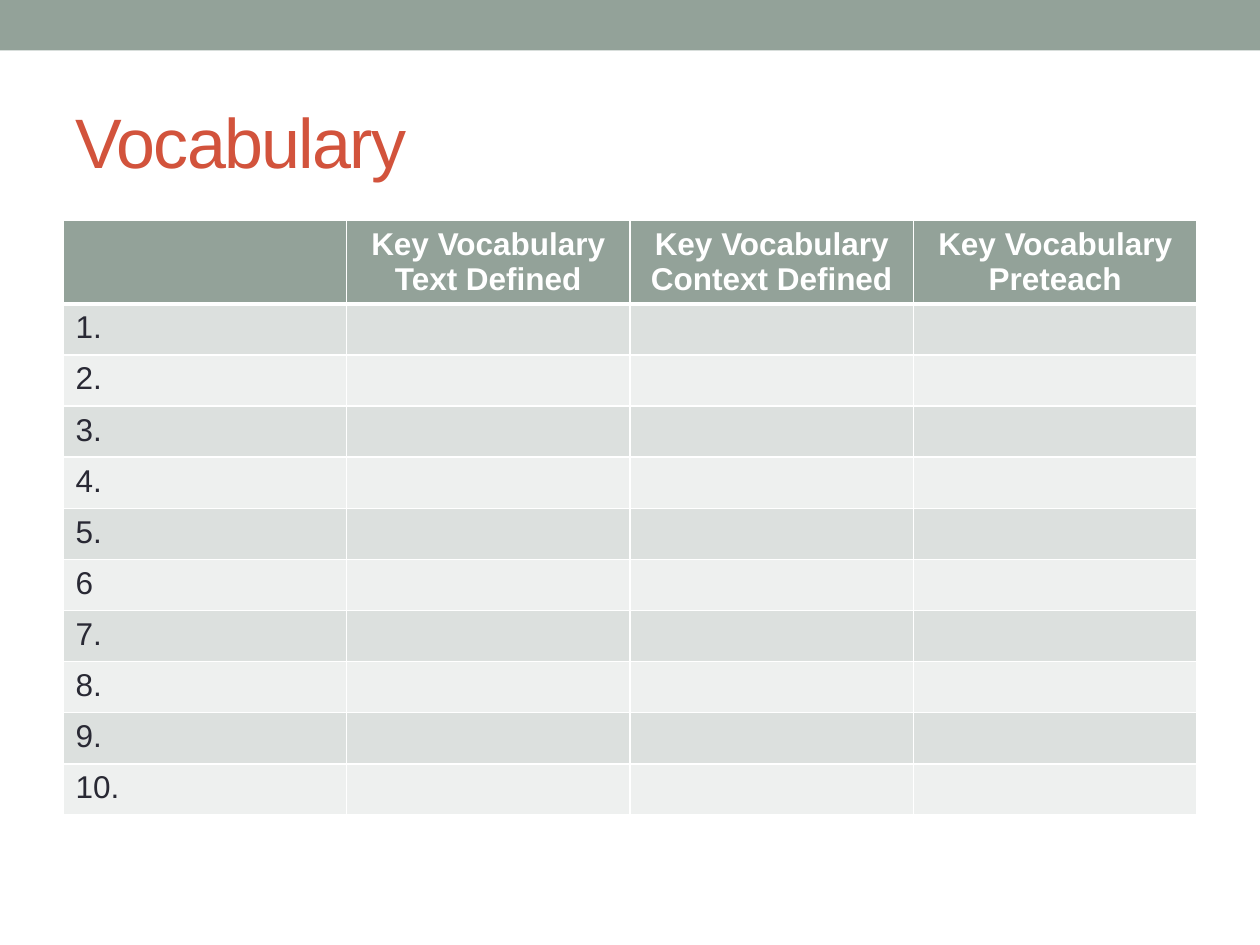
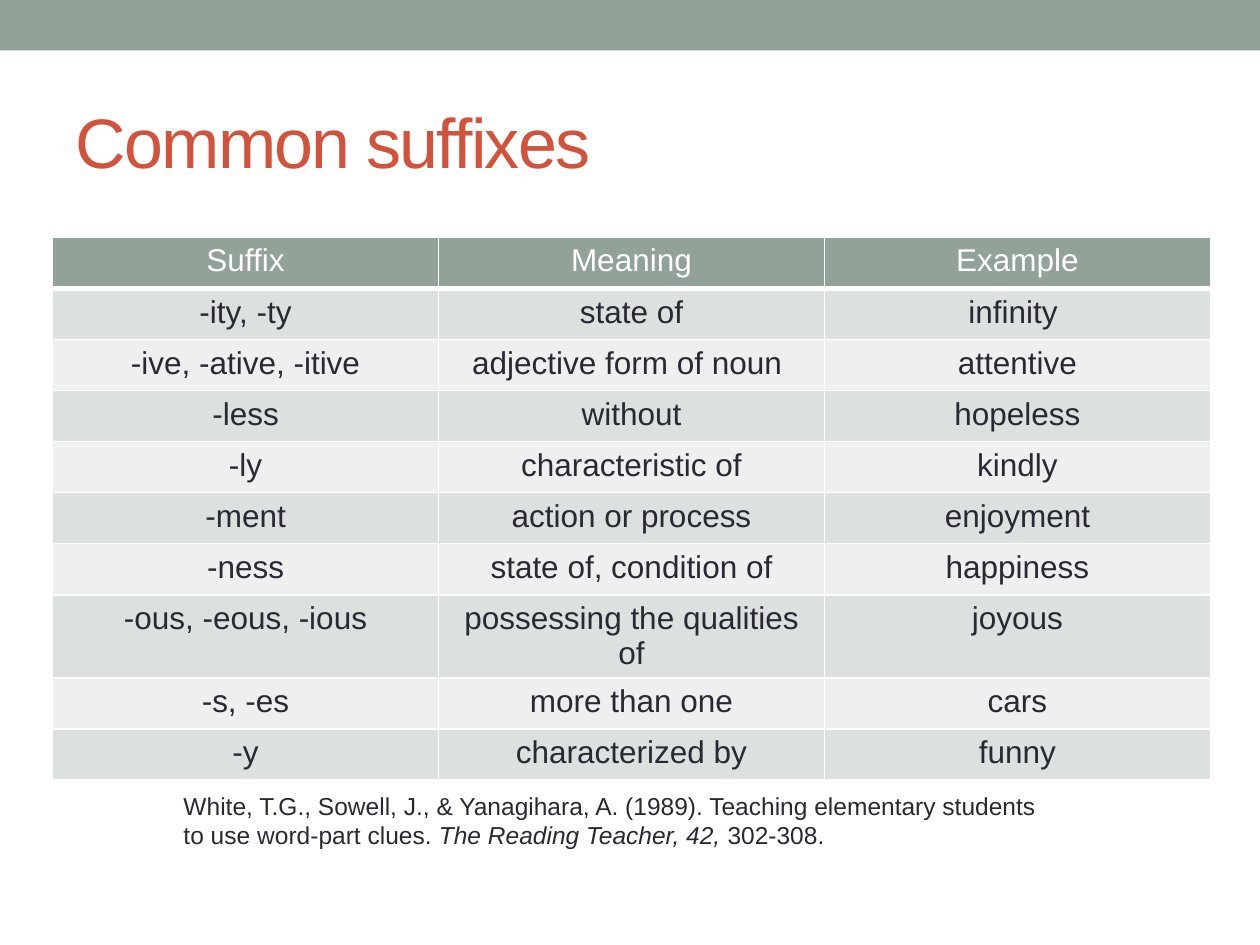
from pptx import Presentation
from pptx.dml.color import RGBColor
from pptx.enum.shapes import MSO_SHAPE
from pptx.enum.text import MSO_ANCHOR, MSO_AUTO_SIZE, PP_ALIGN
from pptx.oxml.ns import qn
from pptx.util import Cm, Pt
from lxml.etree import SubElement

SAGE = RGBColor(0x93, 0xA2, 0x99)
RUST = RGBColor(0xD2, 0x53, 0x3C)
INK = RGBColor(0x29, 0x29, 0x34)
WHITE = RGBColor(0xFF, 0xFF, 0xFF)
ROW_FILLS = (RGBColor(0xEE, 0xF0, 0xEF), RGBColor(0xDC, 0xE0, 0xDE))
FONT = "Arial"
SLIDE_WIDTH, SLIDE_HEIGHT = Cm(25.4), Cm(19.05)
ROW_HEIGHT = Cm(1.03)

VOCABULARY_HEADERS = [
    "",
    "Key Vocabulary\nText Defined",
    "Key Vocabulary\nContext Defined",
    "Key Vocabulary Preteach",
]
NUMBERS = ["1.", "2.", "3.", "4.", "5.", "6", "7.", "8.", "9.", "10."]

SUFFIX_HEADERS = ["Suffix", "Meaning", "Example"]
SUFFIXES = [
    ["-ity, -ty", "state of", "infinity "],
    ["-ive, -ative, -itive", "adjective form of noun ", "attentive"],
    ["-less", "without", "hopeless"],
    ["-ly", "characteristic of", "kindly"],
    ["-ment", "action or process", "enjoyment"],
    ["-ness", "state of, condition of", "happiness"],
    ["-ous, -eous, -ious", "possessing the qualities of", "joyous"],
    ["-s, -es", "more than one", "cars"],
    ["-y", "characterized by", "funny"],
]
CITATION = [
    ("White, T.G., Sowell, J., & Yanagihara, A. (1989). Teaching elementary "
     "students to use word-part clues. ", False),
    ("The Reading Teacher, 42, ", True),
    ("302-308.", False),
]


def add_run(paragraph, text, size, color, bold=False, italic=False):
    run = paragraph.add_run()
    run.text = text
    font = run.font
    font.name, font.size = FONT, Pt(size)
    font.bold, font.italic = bold, italic
    font.color.rgb = color
    return run


def add_band(slide):
    band = slide.shapes.add_shape(MSO_SHAPE.RECTANGLE, 0, 0, SLIDE_WIDTH, Cm(1.02))
    band.shadow.inherit = False
    band.fill.solid()
    band.fill.fore_color.rgb = SAGE
    band.line.fill.background()


def set_title(slide, text):
    title = slide.shapes.title
    title.left, title.top = Cm(1.27), Cm(1.47)
    title.width, title.height = Cm(22.86), Cm(2.74)
    title.text_frame.vertical_anchor = MSO_ANCHOR.MIDDLE
    paragraph = title.text_frame.paragraphs[0]
    paragraph.alignment = PP_ALIGN.LEFT
    run = add_run(paragraph, text, 40, RUST)
    run.font._element.set("spc", "-100")


def add_titled_slide(presentation, title):
    slide = presentation.slides.add_slide(presentation.slide_layouts[5])
    add_band(slide)
    set_title(slide, title)
    return slide


def set_borders(cell, top, bottom):
    properties = cell._tc.get_or_add_tcPr()
    for side, width in (("L", 1), ("R", 1), ("T", top), ("B", bottom)):
        line = SubElement(properties, qn(f"a:ln{side}"), w=str(Pt(width)))
        fill = SubElement(line, qn("a:solidFill"))
        SubElement(fill, qn("a:srgbClr"), val=str(WHITE))


def fill_cell(cell, text, fill, color, bold, alignment):
    cell.fill.solid()
    cell.fill.fore_color.rgb = fill
    for index, line in enumerate(text.split("\n")):
        frame = cell.text_frame
        paragraph = frame.add_paragraph() if index else frame.paragraphs[0]
        paragraph.alignment = alignment
        if line:
            add_run(paragraph, line, 18, color, bold)


def add_grid(slide, left, top, width, headers, rows, header_height=ROW_HEIGHT,
             bold_header=False, body_alignment=PP_ALIGN.CENTER):
    height = header_height + ROW_HEIGHT * len(rows)
    table = slide.shapes.add_table(
        len(rows) + 1, len(headers), left, top, width, height).table
    for column in table.columns:
        column.width = width // len(headers)
    for row_index, texts in enumerate([headers] + rows):
        is_header = row_index == 0
        table.rows[row_index].height = header_height if is_header else ROW_HEIGHT
        for column_index, text in enumerate(texts):
            cell = table.cell(row_index, column_index)
            set_borders(cell, 3 if row_index == 1 else 1, 3 if is_header else 1)
            if is_header:
                fill_cell(cell, text, SAGE, WHITE, bold_header, PP_ALIGN.CENTER)
            else:
                fill_cell(cell, text, ROW_FILLS[row_index % 2], INK, False,
                          body_alignment)


def add_citation(slide):
    box = slide.shapes.add_textbox(Cm(3.45), Cm(15.82), Cm(17.73), Cm(1.45))
    frame = box.text_frame
    frame.word_wrap = True
    frame.auto_size = MSO_AUTO_SIZE.SHAPE_TO_FIT_TEXT
    for text, italic in CITATION:
        add_run(frame.paragraphs[0], text, 14, INK, italic=italic)


def main():
    presentation = Presentation()
    presentation.slide_width, presentation.slide_height = SLIDE_WIDTH, SLIDE_HEIGHT

    vocabulary = add_titled_slide(presentation, "Vocabulary")
    numbered_rows = [[number, "", "", ""] for number in NUMBERS]
    add_grid(vocabulary, Cm(1.27), Cm(4.45), Cm(22.86), VOCABULARY_HEADERS,
             numbered_rows, header_height=Cm(1.47), bold_header=True,
             body_alignment=PP_ALIGN.LEFT)

    suffixes = add_titled_slide(presentation, "Common suffixes")
    add_grid(suffixes, Cm(1.06), Cm(4.78), Cm(23.34), SUFFIX_HEADERS, SUFFIXES)
    add_citation(suffixes)

    presentation.save("out.pptx")


if __name__ == "__main__":
    main()
